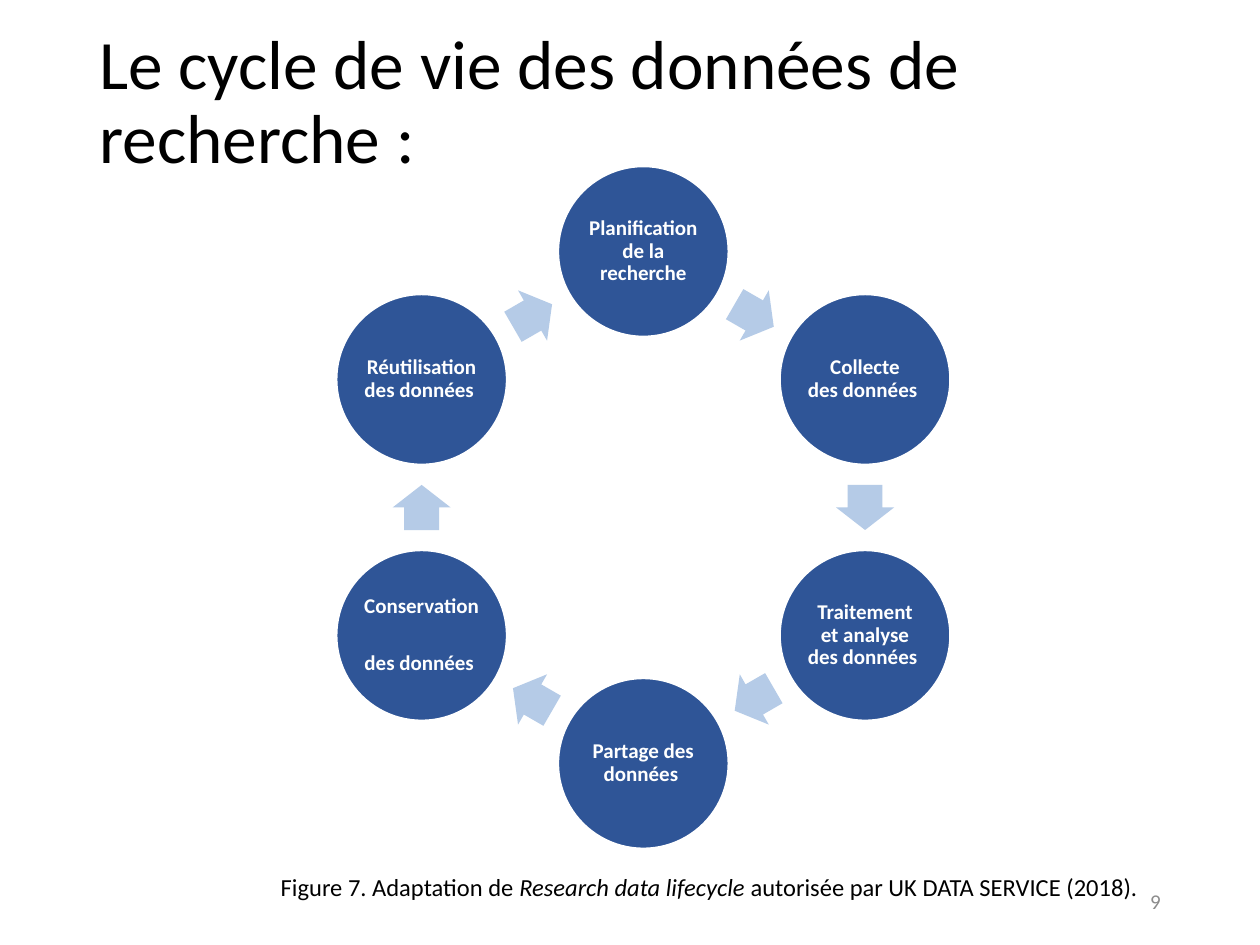
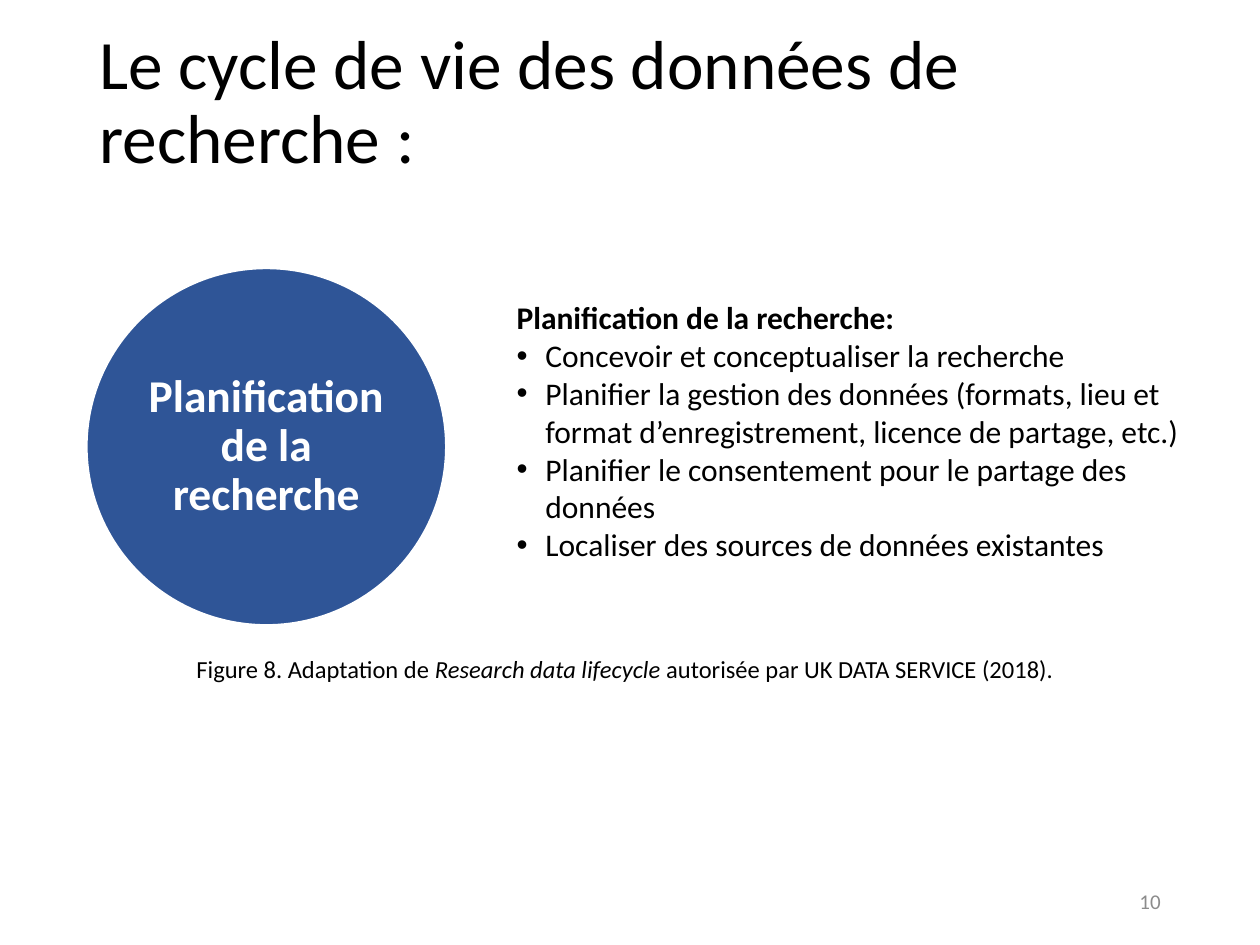
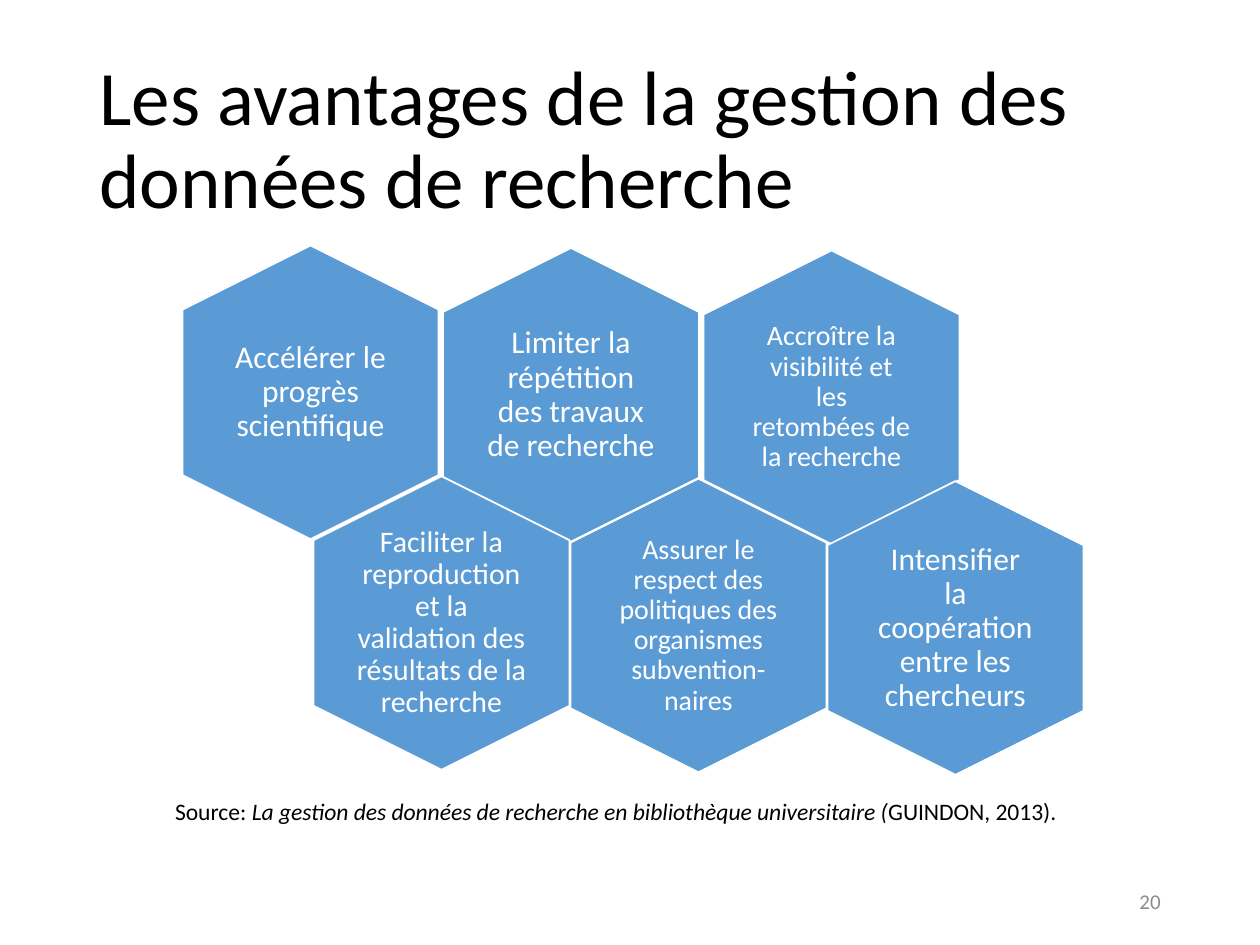
from math import cos, radians, sin

from lxml.etree import SubElement
from pptx import Presentation
from pptx.dml.color import RGBColor
from pptx.enum.shapes import MSO_SHAPE
from pptx.enum.text import MSO_ANCHOR, MSO_AUTO_SIZE, PP_ALIGN
from pptx.oxml.ns import qn
from pptx.util import Cm, Pt

NAVY, PALE, BLUE = "2F5597", "B5CBE7", "5B9BD5"
WHITE, BLACK, GREY = "FFFFFF", "000000", "8C8C8C"
TITLE_ONLY, TITLE_BODY = 5, 1
LEFT, RIGHT, CENTER = PP_ALIGN.LEFT, PP_ALIGN.RIGHT, PP_ALIGN.CENTER

CYCLE_TITLE = "Le cycle de vie des données de recherche :"
STEPS = [
    "Planification de la recherche",
    "Collecte\ndes données ",
    "Traitement et analyse des données ",
    "Partage des données ",
    "Conservation \ndes données ",
    "Réutilisation\ndes données ",
]
PLANNING = [
    "Concevoir et conceptualiser la recherche",
    "Planifier la gestion des données (formats, lieu et format d’enregistrement, "
    "licence de partage, etc.)",
    "Planifier le consentement pour le partage des données",
    "Localiser des sources de données existantes",
]
BENEFIT_ROWS = [
    (6.26, 7.91, 5.25, [
        ("Accélérer le progrès scientifique", 18, 0),
        ("Limiter la répétition des travaux de recherche", 18, 0),
        ("Accroître la visibilité et les retombées de la recherche", 16, 0.18),
    ]),
    (8.9, 12.56, 5.18, [
        ("Faciliter la reproduction et la validation des résultats de la recherche", 17, 0),
        ("Assurer le respect des politiques des organismes subvention-naires", 16, 0.18),
        ("Intensifier la coopération entre les chercheurs", 18, 0.18),
    ]),
]


def rgb(value):
    """Turn a hex string into a colour."""
    return RGBColor.from_string(value)


def apply(obj, values):
    """Set each named attribute of an object."""
    for name, value in values.items():
        setattr(obj, name, value)


def around(x, y, w, h):
    """Give the box of a size centred on a point."""
    return x - w / 2, y - h / 2, w, h


class Deck:
    """Hold the style and the current slide."""

    font = "Calibri"

    def __init__(self):
        """Start an empty 4:3 presentation."""
        self.prs = Presentation()
        apply(self.prs, {"slide_width": Cm(25.4), "slide_height": Cm(19.05)})

    def slide(self, title, number, size, layout=TITLE_ONLY, bottom=0.13):
        """Add a slide with its title and page number."""
        self.s = self.prs.slides.add_slide(self.prs.slide_layouts[layout])
        sp = self.s.shapes.title
        self.place(sp, 1.75, 1.02, 21.89, 3.68)
        self.frame(sp.text_frame, MSO_ANCHOR.MIDDLE)
        sp.text_frame.margin_bottom = Cm(bottom)
        self.fill_paragraph(sp.text_frame.paragraphs[0], [title], size, spacing=0.9)
        self.text((17.93, 17.65, 5.72, 1.02), [str(number)], 12, GREY, RIGHT,
                  MSO_ANCHOR.MIDDLE)

    def place(self, sp, *box):
        """Move and size a shape."""
        apply(sp, dict(zip(("left", "top", "width", "height"), map(Cm, box))))

    def frame(self, tf, anchor=MSO_ANCHOR.TOP, inset=None):
        """Format a text frame."""
        apply(tf, {"word_wrap": True, "auto_size": MSO_AUTO_SIZE.NONE,
                   "vertical_anchor": anchor})
        if inset is not None:
            sides = ("left", "top", "right", "bottom")
            apply(tf, {f"margin_{side}": Cm(inset) for side in sides})

    def fill_paragraph(self, p, parts, size, color=BLACK, align=LEFT, bold=False,
                       spacing=1.0):
        """Fill a paragraph with parts, every second one italic."""
        apply(p, {"alignment": align, "line_spacing": spacing, "space_before": Pt(0)})
        for i, part in enumerate(parts):
            for j, line in enumerate(part.split("\n")):
                if j:
                    p.add_line_break()
                r = p.add_run()
                r.text = line
                apply(r.font, {"name": self.font, "size": Pt(size), "bold": bold,
                               "italic": i % 2 == 1})
                r.font.color.rgb = rgb(color)

    def text(self, box, parts, size, color=BLACK, align=LEFT, anchor=MSO_ANCHOR.TOP,
             inset=None, spacing=1.0):
        """Add a text box."""
        tf = self.s.shapes.add_textbox(*map(Cm, box)).text_frame
        self.frame(tf, anchor, inset)
        self.fill_paragraph(tf.paragraphs[0], parts, size, color, align, spacing=spacing)

    def shape(self, kind, box, fill, rotation=0, outlined=True):
        """Add a flat preset shape."""
        sp = self.s.shapes.add_shape(kind, *map(Cm, box))
        sp.shadow.inherit = False
        sp.rotation = rotation
        sp.fill.solid()
        sp.fill.fore_color.rgb = rgb(fill)
        if outlined:
            sp.line.color.rgb = rgb(WHITE)
            sp.line.width = Pt(1)
        else:
            sp.line.fill.background()
        return sp

    def circle(self, box, label, size, inset):
        """Add a labelled step circle."""
        tf = self.shape(MSO_SHAPE.OVAL, box, NAVY).text_frame
        self.frame(tf, MSO_ANCHOR.MIDDLE, inset)
        self.fill_paragraph(tf.paragraphs[0], [label], size, WHITE, CENTER, True, 0.9)

    def arrow(self, x, y, rotation):
        """Add a block arrow centred on a point."""
        sp = self.shape(MSO_SHAPE.RIGHT_ARROW, around(x, y, 0.91, 1.17), PALE,
                        rotation, False)
        sp.adjustments[0] = 0.6

    def hexagon(self, x, y, label, size, inset):
        """Add an upright hexagon with its label."""
        self.shape(MSO_SHAPE.HEXAGON, around(x, y, 5.92, 5.16), BLUE, 90)
        self.text(around(x, y, 3.56, 4.09), [label], size, WHITE, CENTER,
                  MSO_ANCHOR.MIDDLE, inset, 0.9)

    def bullets(self, box, heading, items, size):
        """Fill the body placeholder with a heading and a list."""
        sp = self.s.placeholders[1]
        self.place(sp, *box)
        tf = sp.text_frame
        self.frame(tf)
        for i, item in enumerate([heading, *items]):
            p = tf.add_paragraph() if i else tf.paragraphs[0]
            indent = Cm(0.58) if i else 0
            pPr = p._p.get_or_add_pPr()
            pPr.set("marL", str(indent))
            pPr.set("indent", str(-indent))
            if i:
                SubElement(pPr, qn("a:buChar"), char="•")
            else:
                SubElement(pPr, qn("a:buNone"))
            self.fill_paragraph(p, [item], size, bold=not i)

    def figure_caption(self, x, y, number):
        """Add the credit line of a figure."""
        self.text((x, y, 18.1, 0.86), [
            f"Figure {number}. Adaptation de ", "Research data lifecycle",
            " autorisée par UK DATA SERVICE (2018)."], 14)


def cycle_slide(deck):
    """Build the ring of six steps."""
    deck.slide(CYCLE_TITLE, 9, 39.6, bottom=1.65)
    x, y, radius = 12.97, 10.23, 5.16
    turn = 360 / len(STEPS)
    middle = radius * cos(radians(turn / 2))
    for i, step in enumerate(STEPS):
        angle = radians(i * turn)
        deck.circle(around(x + radius * sin(angle), y - radius * cos(angle), 3.43, 3.43),
                    step, 12, 0.04)
        heading = (i + 0.5) * turn
        angle = radians(heading)
        deck.arrow(x + middle * sin(angle), y - middle * cos(angle), heading)
    deck.figure_caption(5.41, 17.45, 7)


def planning_slide(deck):
    """Build the detail of the planning step."""
    deck.slide(CYCLE_TITLE, 10, 39.6, TITLE_BODY, 1.65)
    deck.circle((1.75, 5.41, 7.24, 7.19), STEPS[0], 26, 0.1)
    deck.bullets((10.16, 5.89, 14.58, 6.22), "Planification de la recherche:", PLANNING, 18)
    deck.figure_caption(3.71, 13.06, 8)


def benefits_slide(deck):
    """Build the honeycomb of benefits."""
    deck.slide("Les avantages de la gestion des données de recherche", 20, 44)
    for x, y, pitch, benefits in BENEFIT_ROWS:
        for col, benefit in enumerate(benefits):
            deck.hexagon(x + col * pitch, y + col * 0.05, *benefit)
    deck.text((3.28, 15.95, 19.23, 1.42), [
        "Source: ", "La gestion des données de recherche en bibliothèque universitaire (",
        "GUINDON, 2013)."], 13.5)


def main():
    """Build and save the slides."""
    deck = Deck()
    for build in (cycle_slide, planning_slide, benefits_slide):
        build(deck)
    deck.prs.save("out.pptx")


if __name__ == "__main__":
    main()
